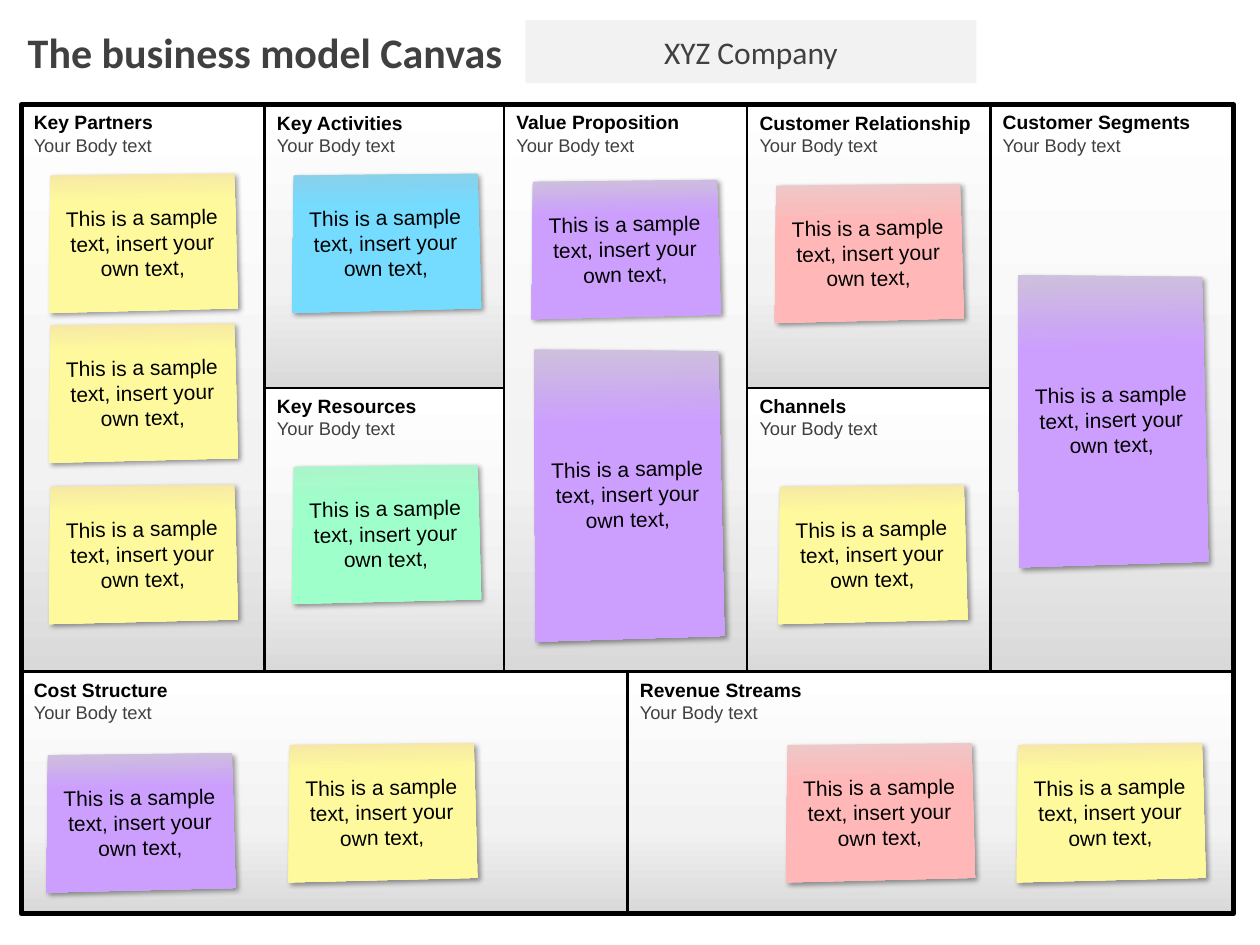
import copy

import pptx
import pptx.util
from lxml import etree
from pptx.dml.color import RGBColor
from pptx.enum.shapes import MSO_SHAPE
from pptx.enum.text import MSO_ANCHOR, MSO_AUTO_SIZE, PP_ALIGN
from pptx.oxml.ns import qn
from pptx.util import Inches

# Content
TITLE = "The business model Canvas"
COMPANY = "XYZ Company"
BODY = "Your Body text"
NOTE = "This is a sample text, insert your own text,"

# Panels: heading, column, first half-row, half-rows spanned
UPPER_PANELS = [
    ("Key Partners", 0, 0, 2),
    ("Key Activities", 1, 0, 1),
    ("Key Resources", 1, 1, 1),
    ("Value Proposition", 2, 0, 2),
    ("Customer Relationship", 3, 0, 1),
    ("Channels", 3, 1, 1),
    ("Customer Segments", 4, 0, 2),
]
LOWER_PANELS = ["Cost Structure", "Revenue Streams"]

# Sticky notes: colour, outline, left, top
NOTES = [
    ("yellow", "short", 0.38, 1.38),
    ("yellow", "short", 0.38, 2.57),
    ("yellow", "short", 0.38, 3.85),
    ("blue", "short", 2.31, 1.38),
    ("green", "short", 2.31, 3.69),
    ("purple", "short", 4.21, 1.43),
    ("purple", "tall", 4.23, 2.76),
    ("purple", "tall", 8.07, 2.17),
    ("pink", "short", 6.14, 1.46),
    ("pink", "short", 6.23, 5.9),
    ("yellow", "short", 6.17, 3.85),
    ("purple", "short", 0.36, 5.98),
    ("yellow", "short", 2.28, 5.9),
    ("yellow", "short", 8.06, 5.9),
]

# Layout in inches
COLUMN_LEFTS = [0.17, 2.1, 4, 5.93, 7.86]
COLUMN_WIDTH = 1.93
HALF_ROW = 2.25
FRAME = (0.17, 0.83, 9.62, 6.42)
LOWER_TOP, LOWER_HEIGHT = 5.33, 1.92
NOTE_CORNERS = {
    "short": [(0.03, 0), (1.49, 0.01), (1.5, 1.08), (0, 1.09)],
    "tall": [(0.03, 0), (1.49, 0.04), (1.5, 2.3), (0, 2.32)],
}

# Colours and type
THEME = {
    "line": "000000",
    "company": "F2F2F2",
    "panel": [(0, "FFFFFF"), (0.65, "F2F2F2"), (1, "D9D9D9")],
    "yellow": [(0, "F6E7A6"), (0.21, "FEF99C"), (1, "FEF99C")],
    "blue": [(0, "8BD0E9"), (0.25, "75DBFF"), (1, "75DBFF")],
    "green": [(0, "ACF4CB"), (0.3, "9FFFCA"), (0.8, "9FFFCA")],
    "purple": [(0, "CDC1DB"), (0.27, "CC9EFE"), (0.76, "CC9EFE")],
    "pink": [(0, "EDC9C9"), (0.3, "FFB7B7"), (1, "FFB7B7")],
    "fonts": {
        "title": {"name": "Calibri", "size": 24, "bold": True, "color": "404040"},
        "company": {"name": "Calibri", "size": 18, "bold": False, "color": "404040"},
        "heading": {"name": "Arial", "size": 11, "bold": True, "color": "000000"},
        "body": {"name": "Arial", "size": 10.5, "bold": False, "color": "404040"},
        "note": {"name": "Arial", "size": 12, "bold": False, "color": "000000"},
    },
}


def write(shape, lines, alignment, anchor):
    """Fill a shape with (text, font style) lines."""
    frame = shape.text_frame
    frame.word_wrap = True
    frame.vertical_anchor = anchor
    for index, (text, style) in enumerate(lines):
        paragraph = frame.add_paragraph() if index else frame.paragraphs[0]
        paragraph.alignment = alignment
        run = paragraph.add_run()
        run.text = text
        for key, value in THEME["fonts"][style].items():
            if key == "color":
                run.font.color.rgb = RGBColor.from_string(value)
            else:
                setattr(run.font, key, pptx.util.Pt(value) if key == "size" else value)


def fill_gradient(shape, stops):
    """Apply a three-stop gradient running from top to bottom."""
    shape.fill.gradient()
    shape.fill.gradient_angle = 270
    stop_list = shape._element.spPr.find(qn("a:gradFill")).find(qn("a:gsLst"))
    stop_list.append(copy.deepcopy(stop_list[0]))
    for stop, (position, color) in zip(shape.fill.gradient_stops, stops):
        stop.position = position
        stop.color.rgb = RGBColor.from_string(color)


def add_box(slide, box, line_width):
    """Add a square-cornered rounded rectangle with a black outline."""
    shape = slide.shapes.add_shape(MSO_SHAPE.ROUNDED_RECTANGLE, *map(Inches, box))
    shape.adjustments[0] = 0
    shape.shadow.inherit = False
    shape.line.color.rgb = RGBColor.from_string(THEME["line"])
    shape.line.width = pptx.util.Pt(line_width)
    return shape


def add_panel(slide, heading, box):
    shape = add_box(slide, box, 1.5)
    fill_gradient(shape, THEME["panel"])
    write(shape, [(heading, "heading"), (BODY, "body")], PP_ALIGN.LEFT, MSO_ANCHOR.TOP)


def add_shadow(shape):
    """Give a shape a soft shadow to the lower right."""
    shape.shadow.inherit = False
    effects = shape._element.spPr.find(qn("a:effectLst"))
    shadow = etree.SubElement(
        effects, qn("a:outerShdw"), blurRad=str(pptx.util.Pt(3)),
        dist=str(pptx.util.Pt(2)), dir="2700000", algn="tl", rotWithShape="0")
    color = etree.SubElement(shadow, qn("a:srgbClr"), val="000000")
    etree.SubElement(color, qn("a:alpha"), val="40000")


def add_note(slide, color, outline, left, top):
    corners = [(Inches(left + x), Inches(top + y)) for x, y in NOTE_CORNERS[outline]]
    builder = slide.shapes.build_freeform(*corners[0])
    builder.add_line_segments(corners[1:], close=True)
    shape = builder.convert_to_shape()
    shape.rotation = 359
    fill_gradient(shape, THEME[color])
    shape.line.fill.background()
    add_shadow(shape)
    for side in ("left", "top", "right", "bottom"):
        setattr(shape.text_frame, f"margin_{side}", Inches(0.05))
    write(shape, [(NOTE, "note")], PP_ALIGN.CENTER, MSO_ANCHOR.MIDDLE)


def main():
    presentation = pptx.Presentation()
    presentation.slide_width, presentation.slide_height = Inches(10), Inches(7.5)
    slide = presentation.slides.add_slide(presentation.slide_layouts[5])

    # Canvas panels and outer frame
    half_width = FRAME[2] / 2
    for index, heading in enumerate(LOWER_PANELS):
        left = FRAME[0] + index * half_width
        add_panel(slide, heading, (left, LOWER_TOP, half_width, LOWER_HEIGHT))
    for heading, column, row, span in UPPER_PANELS:
        top = FRAME[1] + row * HALF_ROW
        add_panel(slide, heading,
                  (COLUMN_LEFTS[column], top, COLUMN_WIDTH, span * HALF_ROW))
    add_box(slide, FRAME, 3).fill.background()

    # Title and company name
    title = slide.shapes.title
    title.left, title.top, title.width, title.height = map(Inches, (0.12, 0.16, 4.01, 0.5))
    write(title, [(TITLE, "title")], PP_ALIGN.LEFT, MSO_ANCHOR.MIDDLE)
    title.text_frame.word_wrap = False
    title.text_frame.auto_size = MSO_AUTO_SIZE.NONE
    company = slide.shapes.add_shape(
        MSO_SHAPE.RECTANGLE, *map(Inches, (4.17, 0.16, 3.58, 0.5)))
    company.shadow.inherit = False
    company.fill.solid()
    company.fill.fore_color.rgb = RGBColor.from_string(THEME["company"])
    company.line.fill.background()
    write(company, [(COMPANY, "company")], PP_ALIGN.CENTER, MSO_ANCHOR.MIDDLE)

    # Sticky notes
    for note in NOTES:
        add_note(slide, *note)

    presentation.save("out.pptx")


if __name__ == "__main__":
    main()
